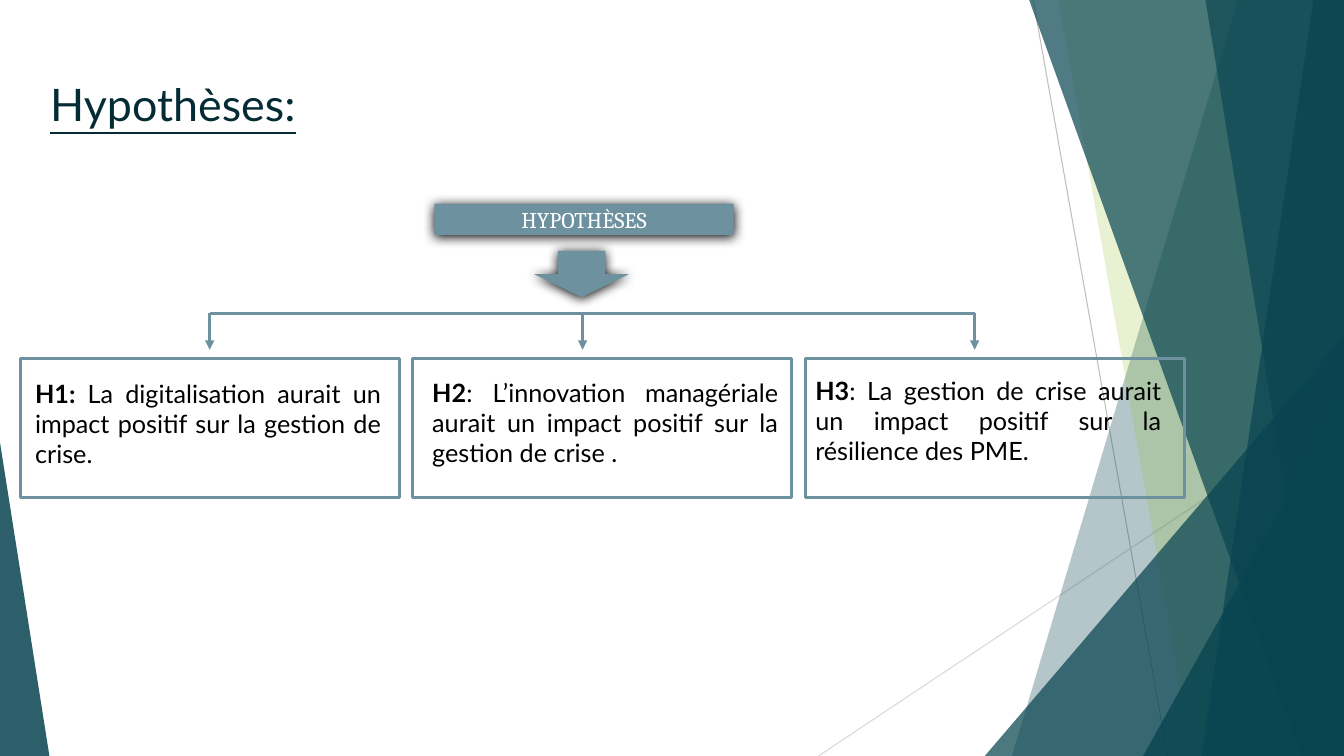
import dataclasses
import typing

import lxml.etree
import pptx
import pptx.dml.color
import pptx.enum.shapes
import pptx.enum.text
import pptx.oxml.ns
import pptx.util

# The slide is a grid of 40 columns by 22.5 rows of square cells.
COLUMNS, ROWS = 40, 22.5
CELL = pptx.util.Inches(1) / 3
TEAL, LIME, STEEL = "084450", "90C226", "6E91A0"
SHAPE = pptx.enum.shapes.MSO_SHAPE
ALIGN = pptx.enum.text.PP_ALIGN


@dataclasses.dataclass
class Box:
    left: float
    top: float
    width: float
    height: float


@dataclasses.dataclass
class Band:
    """A shade from a slanted left edge to the right side of the slide."""
    top_column: float
    bottom_column: float
    color: str
    opacity: int


@dataclasses.dataclass
class Corner:
    """A right triangle; apex 0 leans left and 1 leans right."""
    box: Box
    apex: float
    opacity: int


@dataclasses.dataclass
class Hypothesis:
    label: str
    statement: str
    text_left: float
    text_top: float
    arrow_column: float


DECOR = [
    Band(36.84, 30.12, TEAL, 30),
    Band(31.5, 35.49, LIME, 20),
    Corner(Box(29.31, 9.99, 10.69, 12.51), 1, 72),
    Band(30.63, 38.73, TEAL, 70),
    Band(39.09, 35.76, TEAL, 70),
    Band(35.88, 39.54, TEAL, 65),
    Corner(Box(34.02, 11.79, 5.98, 10.71), 1, 80),
    Corner(Box(0, 13.17, 1.47, 9.33), 0, 85),
]
HYPOTHESES = [
    Hypothesis("H1: ", "La digitalisation aurait un impact positif sur la gestion de crise.",
               0.75, 11.1, 6.24),
    Hypothesis("H2", ": L’innovation managériale aurait un impact positif sur la gestion de crise .",
               12.57, 11.07, 17.34),
    Hypothesis("H3", ": La gestion de crise aurait un impact positif sur la résilience des PME.",
               23.97, 11.01, 29.01),
]
BRANCH_ROW, ARROW_END_ROW = 9.33, 10.41
FRAME, FRAME_STEP = Box(0.6, 10.68, 11.28, 4.14), 11.69


def cells(*values: float) -> list[pptx.util.Emu]:
    return [pptx.util.Emu(round(value * CELL)) for value in values]


def rgb(color: str) -> pptx.dml.color.RGBColor:
    return pptx.dml.color.RGBColor.from_string(color)


def add_element(parent: typing.Any, tag: str, **attributes: str) -> typing.Any:
    return lxml.etree.SubElement(parent, pptx.oxml.ns.qn(tag), attributes)


def paint(shape: typing.Any, color: str, opacity: int = 100) -> None:
    """Fill flat, without outline or shadow."""
    shape.shadow.inherit = False
    shape.fill.solid()
    shape.fill.fore_color.rgb = rgb(color)
    shape.line.fill.background()
    if opacity < 100:
        color_element = shape.element.spPr.find(".//" + pptx.oxml.ns.qn("a:srgbClr"))
        add_element(color_element, "a:alpha", val=str(opacity * 1000))


def add_preset(slide: typing.Any, kind: typing.Any, box: Box) -> typing.Any:
    return slide.shapes.add_shape(kind, *cells(box.left, box.top, box.width, box.height))


def add_decor(slide: typing.Any, item: Band | Corner) -> None:
    if isinstance(item, Corner):
        triangle = add_preset(slide, SHAPE.ISOSCELES_TRIANGLE, item.box)
        triangle.adjustments[0] = item.apex
        paint(triangle, TEAL, item.opacity)
        return
    builder = slide.shapes.build_freeform(*cells(item.top_column, 0))
    corners = [(COLUMNS, 0), (COLUMNS, ROWS), (item.bottom_column, ROWS)]
    builder.add_line_segments([cells(*corner) for corner in corners])
    paint(builder.convert_to_shape(), item.color, item.opacity)


def add_line(slide: typing.Any, start: tuple[float, float], end: tuple[float, float],
             color: str, width: float, arrow: bool = False) -> None:
    connector = slide.shapes.add_connector(
        pptx.enum.shapes.MSO_CONNECTOR.STRAIGHT, *cells(*start, *end))
    connector.line.color.rgb = rgb(color)
    connector.line.width = pptx.util.Pt(width)
    if arrow:
        add_element(connector.line._get_or_add_ln(), "a:tailEnd", type="triangle")
    add_element(connector._element.spPr, "a:effectLst")


def add_shadowed(slide: typing.Any, kind: typing.Any, box: Box) -> typing.Any:
    shape = add_preset(slide, kind, box)
    paint(shape, STEEL)
    effects = shape.element.spPr.find(pptx.oxml.ns.qn("a:effectLst"))
    shadow = add_element(effects, "a:outerShdw", blurRad=str(pptx.util.Pt(8.5)),
                         dist=str(pptx.util.Pt(1)), dir="5400000", rotWithShape="0")
    add_element(shadow, "a:srgbClr", val="000000")
    return shape


def add_run(paragraph: typing.Any, text: str, color: str, **font_format: typing.Any) -> None:
    run = paragraph.add_run()
    run.text = text
    run.font.color.rgb = rgb(color)
    for name, value in font_format.items():
        setattr(run.font, name, value)


def add_text_box(slide: typing.Any, box: Box, alignment: typing.Any) -> typing.Any:
    """Add a wrapping text box and return its first paragraph."""
    text_box = slide.shapes.add_textbox(*cells(box.left, box.top, box.width, box.height))
    text_box.text_frame.word_wrap = True
    paragraph = text_box.text_frame.paragraphs[0]
    paragraph.alignment = alignment
    return paragraph


def add_hypothesis(slide: typing.Any, index: int, hypothesis: Hypothesis) -> None:
    column = hypothesis.arrow_column
    add_line(slide, (column, BRANCH_ROW), (column, ARROW_END_ROW), STEEL, 2.25, arrow=True)
    text_box = Box(hypothesis.text_left, hypothesis.text_top, 10.89, 3.03)
    paragraph = add_text_box(slide, text_box, ALIGN.JUSTIFY)
    font_format = {"name": "Lato", "size": pptx.util.Pt(18)}
    add_run(paragraph, hypothesis.label, "000000", bold=True, **font_format)
    add_run(paragraph, hypothesis.statement, "000000", bold=False, **font_format)
    left = FRAME.left + index * FRAME_STEP
    frame = add_preset(slide, SHAPE.RECTANGLE, dataclasses.replace(FRAME, left=left))
    frame.shadow.inherit = False
    frame.fill.background()
    frame.line.color.rgb = rgb(STEEL)
    frame.line.width = pptx.util.Pt(2.25)


def main() -> None:
    presentation = pptx.Presentation()
    presentation.slide_width, presentation.slide_height = cells(COLUMNS, ROWS)
    slide = presentation.slides.add_slide(presentation.slide_layouts[6])

    add_line(slide, (30.75, 0), (34.75, ROWS), "BFBFBF", 0.75)
    add_line(slide, (COLUMNS, 12.09), (24.36, ROWS), "D9D9D9", 0.75)
    for item in DECOR:
        add_decor(slide, item)

    title = add_text_box(slide, Box(1.2, 2.13, 28.2, 2.73), ALIGN.LEFT)
    add_run(title, "Hypothèses:", "052C34", name="Lato", size=pptx.util.Pt(32), underline=True)

    header = add_shadowed(slide, SHAPE.RECTANGLE, Box(12.93, 6.06, 8.91, 0.93))
    header.text_frame.vertical_anchor = pptx.enum.text.MSO_ANCHOR.MIDDLE
    heading = header.text_frame.paragraphs[0]
    heading.alignment = ALIGN.CENTER
    add_run(heading, "HYPOTHÈSES", "FFFFFF", name="Cambria", size=pptx.util.Pt(16))
    add_shadowed(slide, SHAPE.DOWN_ARROW, Box(15.9, 7.47, 2.82, 1.38))

    first, last = HYPOTHESES[0].arrow_column, HYPOTHESES[-1].arrow_column
    add_line(slide, (last, BRANCH_ROW), (first, BRANCH_ROW), STEEL, 2.25)
    for index, hypothesis in enumerate(HYPOTHESES):
        add_hypothesis(slide, index, hypothesis)
    presentation.save("out.pptx")


if __name__ == "__main__":
    main()
